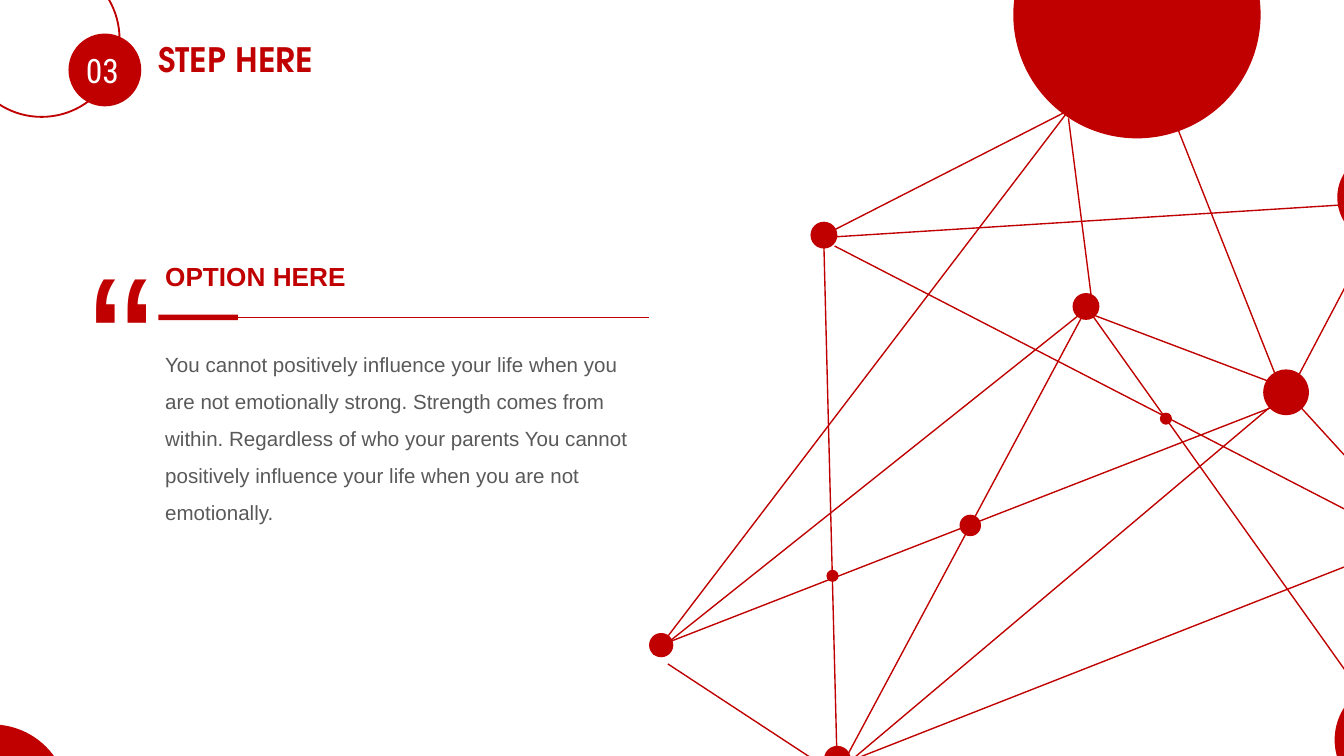
import pptx
import pptx.dml.color
import pptx.enum.shapes
import pptx.enum.text
import pptx.oxml.ns
import pptx.util
from lxml import etree

Pt = pptx.util.Pt
SHAPES = pptx.enum.shapes.MSO_SHAPE
ALIGN = pptx.enum.text.PP_ALIGN
RED, GRAY, WHITE = "C00000", "595959", "FFFFFF"

# Center x, center y, diameter
LOWER_DISCS = [
    (-4.3, 429.1, 82), (609.1, 7.9, 132.5), (689, 210.2, 24.5),
    (354.2, 345.6, 13), (441.4, 126, 14.4),
]
MIDDLE_DISCS = [(747, 396.4, 64), (581.8, 164.2, 14.4), (448.6, 406.8, 14.4)]
UPPER_DISCS = [
    (740.9, 105.8, 49), (519.8, 281.5, 11.5),
    (446, 308.5, 6.5), (624.6, 224.3, 6.5),
]
TRIANGLE = [(354.2, 345.6), (608.4, 12.2), (689, 215.3)]
# Start x, start y, end x, end y
LINKS = [
    (581.8, 164.2, 747.4, 396.7),
    (455.8, 407.5, 689.8, 210.2),
    (448.6, 414.7, 581.8, 165.6),
    (357.8, 355.7, 450, 416.2),
    (455.8, 407.5, 756.7, 289.4),
    (447.1, 131.8, 762.5, 294.5),
    (448.6, 414.7, 441.4, 131.8),
    (349.9, 350.6, 580.3, 167),
    (441.4, 126, 623.5, 33.1),
    (577.4, 165.6, 689.8, 208.1),
    (572.4, 63.4, 585.4, 164.9),
    (439.2, 127.4, 747.4, 108),
    (690.5, 211, 745.9, 105.8),
    (762.5, 290.2, 687.6, 208.1),
]
QUOTE = (
    "You cannot positively influence your life when you are not emotionally "
    "strong. Strength comes from within. Regardless of who your parents You "
    "cannot positively influence your life when you are not emotionally."
)


def color(value):
    return pptx.dml.color.RGBColor.from_string(value)


class SlideBuilder:
    def __init__(self, slide, accent=RED, line_width=0.75):
        self.slide = slide
        self.accent = accent
        self.line_width = line_width

    def paint(self, shape, filled, width=None):
        """Give a shape an accent fill or an accent outline."""
        shape.shadow.inherit = False
        if filled:
            shape.fill.solid()
            shape.fill.fore_color.rgb = color(self.accent)
            shape.line.fill.background()
        else:
            shape.fill.background()
            shape.line.color.rgb = color(self.accent)
            shape.line.width = Pt(width or self.line_width)

    def circle(self, x, y, diameter, filled=True):
        shape = self.slide.shapes.add_shape(
            SHAPES.OVAL, Pt(x - diameter / 2), Pt(y - diameter / 2),
            Pt(diameter), Pt(diameter))
        self.paint(shape, filled, width=1)

    def bar(self, left, top, width, height):
        shape = self.slide.shapes.add_shape(
            SHAPES.RECTANGLE, Pt(left), Pt(top), Pt(width), Pt(height))
        self.paint(shape, filled=True)

    def polygon(self, points):
        corners = [(Pt(x), Pt(y)) for x, y in points]
        builder = self.slide.shapes.build_freeform(*corners[0])
        builder.add_line_segments(corners[1:], close=True)
        self.paint(builder.convert_to_shape(), filled=False)

    def line(self, x1, y1, x2, y2):
        connector = self.slide.shapes.add_connector(
            pptx.enum.shapes.MSO_CONNECTOR.STRAIGHT,
            Pt(x1), Pt(y1), Pt(x2), Pt(y2))
        connector.line.color.rgb = color(self.accent)
        connector.line.width = Pt(self.line_width)
        etree.SubElement(connector._element.spPr,
                         pptx.oxml.ns.qn("a:effectLst"))

    def text(self, content, left, top, width, height, size, font="Arial",
             fill=RED, bold=False, align=ALIGN.JUSTIFY, spacing=1,
             insets=(7.2, 3.6)):
        box = self.slide.shapes.add_textbox(
            Pt(left), Pt(top), Pt(width), Pt(height))
        frame = box.text_frame
        frame.word_wrap = True
        frame.margin_left = frame.margin_right = Pt(insets[0])
        frame.margin_top = frame.margin_bottom = Pt(insets[1])
        paragraph = frame.paragraphs[0]
        paragraph.alignment = align
        paragraph.line_spacing = spacing
        run = paragraph.add_run()
        run.text = content
        run.font.name = font
        run.font.size = Pt(size)
        run.font.bold = bold
        run.font.color.rgb = color(fill)


def main():
    presentation = pptx.Presentation()
    presentation.slide_width = Pt(720)
    presentation.slide_height = Pt(405)
    slide = presentation.slides.add_slide(presentation.slide_layouts[6])
    builder = SlideBuilder(slide)
    header_insets = (5, 2.7)

    # Step number
    builder.circle(56.2, 37.5, 39)
    builder.circle(22.3, 20.9, 83.5, filled=False)
    builder.text("03", 41, 23.8, 31, 27.4, 18, font="Roboto Condensed",
                 fill=WHITE, insets=header_insets)

    # Quotation
    builder.text(QUOTE, 81.4, 178.6, 266.4, 127.4, 11, fill=GRAY,
                 align=ALIGN.LEFT, spacing=1.5)
    builder.text("OPTION HERE", 81.4, 136.1, 257.8, 24.5, 14, bold=True)
    builder.text("“", 41, 113.8, 49.7, 133.2, 104, align=ALIGN.LEFT)
    builder.bar(84.8, 168.6, 42.7, 2.9)
    builder.line(125.3, 170, 347.8, 170)

    # Network
    for disc in LOWER_DISCS:
        builder.circle(*disc)
    builder.polygon(TRIANGLE)
    for disc in MIDDLE_DISCS:
        builder.circle(*disc)
    for link in LINKS:
        builder.line(*link)
    for disc in UPPER_DISCS:
        builder.circle(*disc)

    builder.text("STEP HERE", 79.9, 18, 194.4, 27.4, 18,
                 font="TeX Gyre Adventor", bold=True, insets=header_insets)
    presentation.save("out.pptx")


if __name__ == "__main__":
    main()
